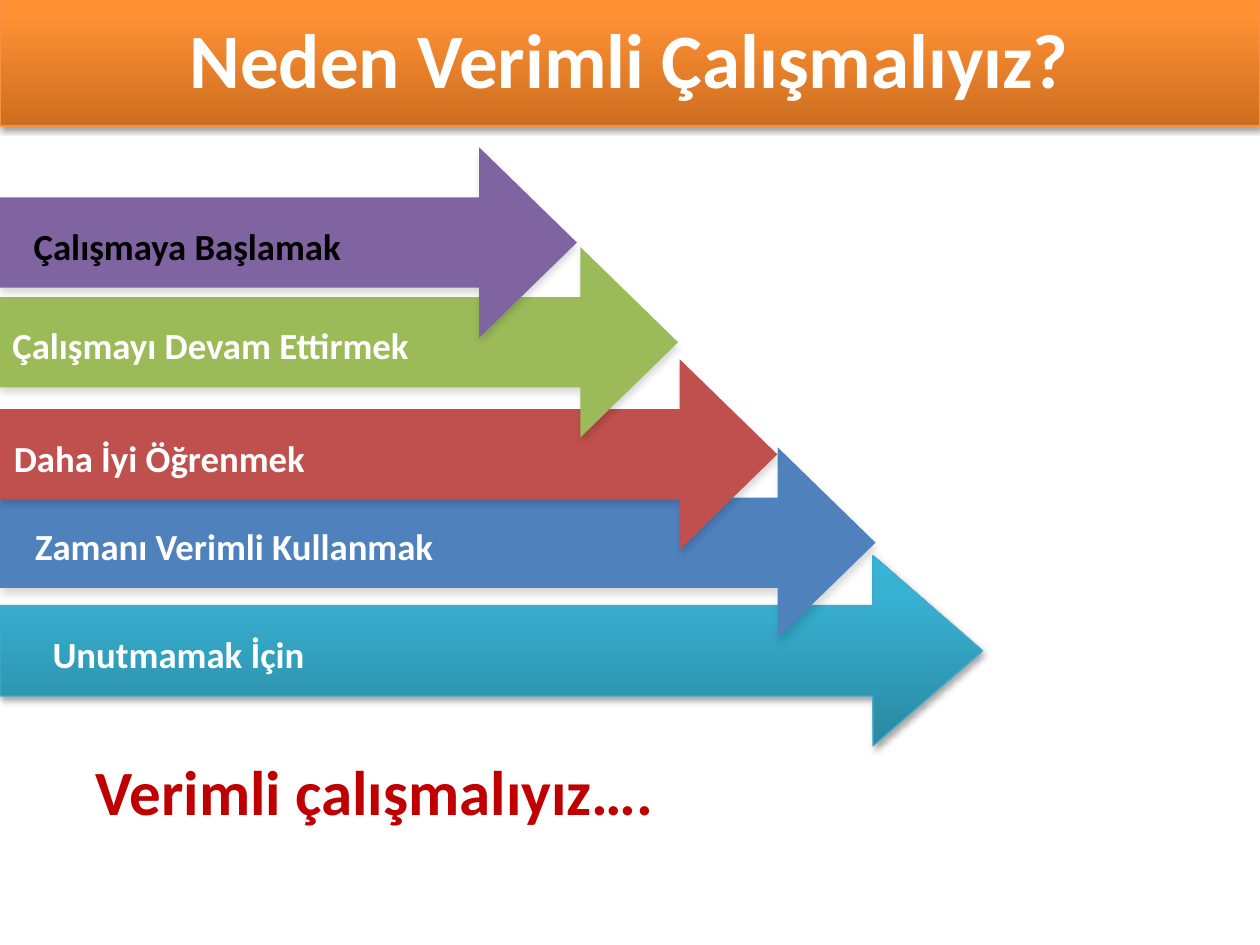
from lxml import etree
from pptx import Presentation
from pptx.dml.color import RGBColor
from pptx.enum.text import MSO_ANCHOR, MSO_AUTO_SIZE, PP_ALIGN
from pptx.oxml.ns import qn
from pptx.util import Cm, Pt

CENTER = PP_ALIGN.CENTER
MIDDLE = MSO_ANCHOR.MIDDLE
GROW = MSO_AUTO_SIZE.SHAPE_TO_FIT_TEXT
FONT = "Calibri"
TITLE_ONLY = 5

ARROW_H, SHAFT_INSET = 3.84, 1.01
LABEL_DY, LABEL_H = 1.41, 1.14

SOFT_SHADOW = (15, 4, 3)  # opacity %, blur pt, distance pt
STRONG_SHADOW = (35, 3.1, 1.8)
ORANGE = ("CC6E20", "FF9034", "FF9136")
TEAL = ("2A88A2", "37B1D2", "34B4D6")

# text, colour, top, tip, label left, label width, label colour (cm)
ARROWS = [
    ("Çalışmaya Başlamak", "8064A2", 2.97, 11.63, 0.43, 10.19, "000000"),
    ("Çalışmayı Devam Ettirmek", "9BBB59", 4.98, 13.67, 0, 12.62, "FFFFFF"),
    ("Daha İyi Öğrenmek", "C0504D", 7.24, 15.67, 0.03, 11.86, "FFFFFF"),
    ("Zamanı Verimli Kullanmak", "4F81BD", 9.02, 17.65, 0.46, 15.14, "FFFFFF"),
    ("Unutmamak İçin", None, 11.2, 19.81, 0.81, 15.14, "FFFFFF"),
]


def rgb(color):
    return RGBColor.from_string(color)


def add_shadow(sp, opacity, blur, dist):
    effects = etree.SubElement(sp._element.spPr, qn("a:effectLst"))
    shadow = etree.SubElement(effects, qn("a:outerShdw"), blurRad=str(Pt(blur)),
                              dist=str(Pt(dist)), dir="5400000", rotWithShape="0")
    color = etree.SubElement(shadow, qn("a:srgbClr"), val="000000")
    etree.SubElement(color, qn("a:alpha"), val=str(opacity * 1000))


def style_glossy(sp, colors, line):
    """Upward three-stop gradient, thin outline and strong shadow."""
    sp.fill.gradient()
    sp.fill.gradient_angle = 90
    stops = sp._element.spPr.find(qn("a:gradFill")).find(qn("a:gsLst"))
    for old in list(stops):
        stops.remove(old)
    for pos, color in zip((0, 80, 100), colors):
        stop = etree.SubElement(stops, qn("a:gs"), pos=str(pos * 1000))
        etree.SubElement(stop, qn("a:srgbClr"), val=color)
    sp.line.color.rgb = rgb(line)
    sp.line.width = Pt(0.75)
    add_shadow(sp, *STRONG_SHADOW)


def style_flat(sp, color):
    sp.fill.solid()
    sp.fill.fore_color.rgb = rgb(color)
    sp.line.fill.background()
    add_shadow(sp, *SOFT_SHADOW)


def set_text(tf, text, size, color):
    p = tf.paragraphs[0]
    p.text = text
    p.font.name, p.font.size, p.font.bold = FONT, Pt(size), True
    p.font.color.rgb = rgb(color)
    return p


def add_title(s, x, y, w, h):
    sp = s.shapes.title
    sp.left, sp.top, sp.width, sp.height = Cm(x), Cm(y), Cm(w), Cm(h)
    style_glossy(sp, ORANGE, "F69240")
    sp.text_frame.vertical_anchor = MIDDLE
    set_text(sp.text_frame, "Neden Verimli Çalışmalıyız?", 44, "FFFFFF").alignment = CENTER


def add_arrow(s, x, y, w, h, head):
    neck, tip, bottom = x + w - head, x + w, y + h
    shaft_top, shaft_bottom = y + SHAFT_INSET, bottom - SHAFT_INSET
    points = [(neck, y), (neck, shaft_top), (x, shaft_top), (x, shaft_bottom),
              (neck, shaft_bottom), (neck, bottom)]
    builder = s.shapes.build_freeform(Cm(tip), Cm(y + h / 2))
    builder.add_line_segments([(Cm(px), Cm(py)) for px, py in points])
    return builder.convert_to_shape()


def add_label(s, x, y, w, h, text, size, color):
    tf = s.shapes.add_textbox(Cm(x), Cm(y), Cm(w), Cm(h)).text_frame
    tf.word_wrap = True
    tf.auto_size = GROW
    set_text(tf, text, size, color)


def add_arrow_stack(s, x, y):
    # Arrows, lowest one at the back
    for _, color, top, tip, *_ in reversed(ARROWS):
        sp = add_arrow(s, x, y + top, tip, ARROW_H, 1.97 if color else 2.21)
        if color:
            style_flat(sp, color)
        else:
            style_glossy(sp, TEAL, "46AAC5")
    # Labels over the shafts
    for text, _, top, _, left, width, color in ARROWS:
        add_label(s, x + left, y + top + LABEL_DY, width, LABEL_H, text, 21, color)


def main():
    prs = Presentation()
    prs.slide_width, prs.slide_height = Cm(25.4), Cm(19.05)
    s = prs.slides.add_slide(prs.slide_layouts[TITLE_ONLY])
    add_title(s, 0, -0.23, 25.4, 2.77)
    add_arrow_stack(s, 0, 0)
    # Conclusion
    add_label(s, 1.68, 15.04, 16.31, 1.8, "Verimli çalışmalıyız….", 36, "C00000")
    prs.save("out.pptx")


if __name__ == "__main__":
    main()
